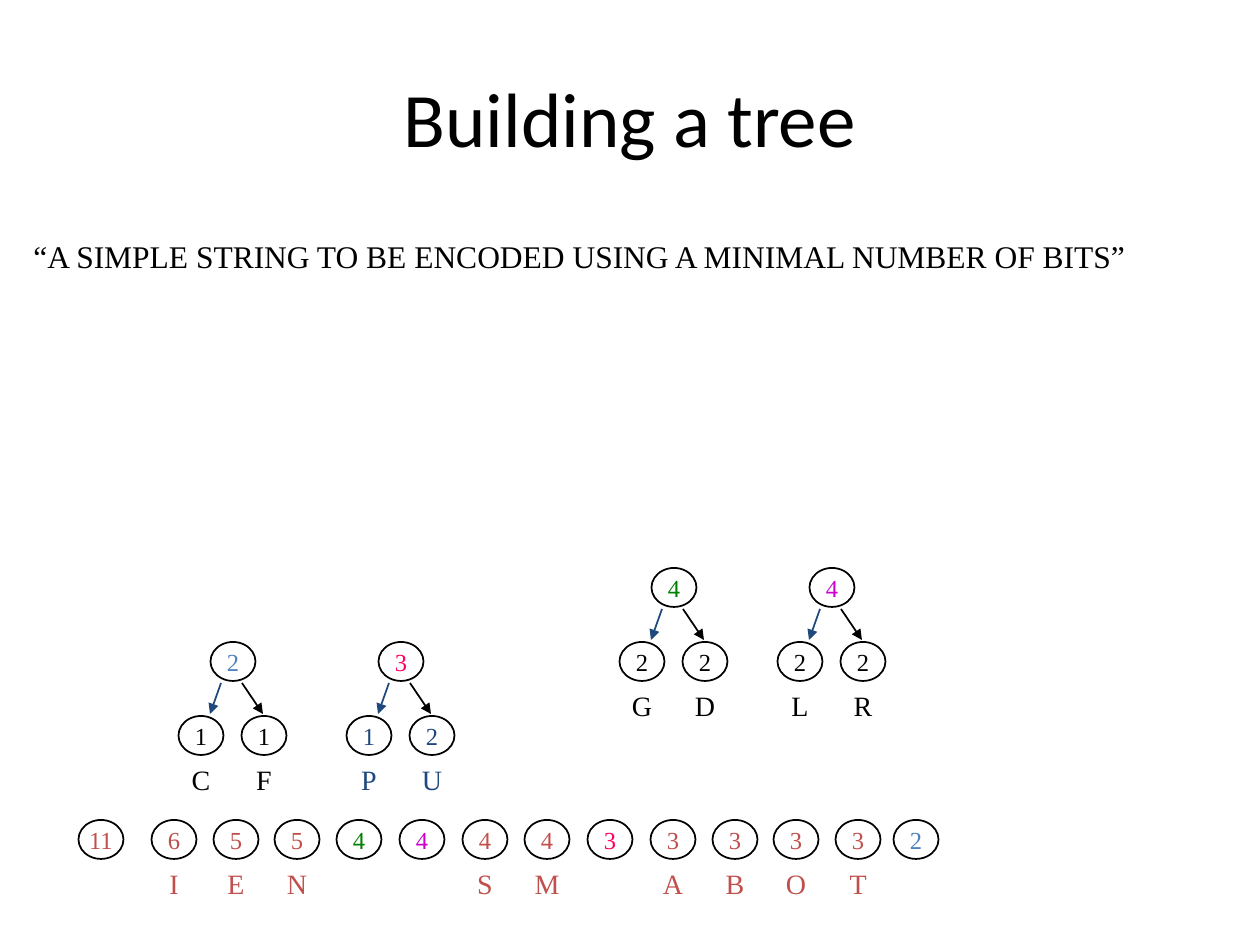
from lxml.etree import SubElement
from pptx import Presentation
from pptx.dml.color import RGBColor
from pptx.enum.shapes import MSO_CONNECTOR as Link, MSO_SHAPE as Shape
from pptx.enum.text import MSO_ANCHOR as Anchor, MSO_AUTO_SIZE as Fit, PP_ALIGN as Align
from pptx.oxml.ns import qn
from pptx.util import Emu, Pt

BLACK = RGBColor(0x00, 0x00, 0x00)
RED = RGBColor(0xC0, 0x50, 0x4D)
NAVY = RGBColor(0x1F, 0x49, 0x7D)
BLUE = RGBColor(0x4F, 0x81, 0xBD)
PINK = RGBColor(0xFF, 0x00, 0x66)
PURPLE = RGBColor(0xCC, 0x00, 0xCC)
GREEN = RGBColor(0x00, 0x80, 0x00)

TITLE = "Building a tree"
QUOTE = "“A SIMPLE STRING TO BE ENCODED USING A MINIMAL NUMBER OF BITS”"

# centre x, count, letter, colour
QUEUE = [
    (101, "11", "", RED), (174, "6", "I", RED), (236, "5", "E", RED),
    (297, "5", "N", RED), (359, "4", "", GREEN), (422, "4", "", PURPLE),
    (485, "4", "S", RED), (547, "4", "M", RED), (610, "3", "", PINK),
    (673, "3", "A", RED), (735, "3", "B", RED), (796, "3", "O", RED),
    (858, "3", "T", RED), (916, "2", "", BLUE),
]
# root x, root top, sum, root colour, leaf colour, (count, letter) of each leaf
TREES = [
    (233, 642, "2", BLUE, BLACK, [("1", "C"), ("1", "F")]),
    (401, 642, "3", PINK, NAVY, [("1", "P"), ("2", "U")]),
    (674, 568, "4", GREEN, BLACK, [("2", "G"), ("2", "D")]),
    (832, 568, "4", PURPLE, BLACK, [("2", "L"), ("2", "R")]),
]
# leaf offset, arrow start and end offsets, arrow colour
SIDES = [(-32, -12, -23, NAVY), (31, 9, 30, BLACK)]
QUEUE_TOP = 820
LEVEL = 74
NODE_W, NODE_H = 45, 39


def px(*vals):
    return [Emu(round(v * 914400 / 126)) for v in vals]


def put(frame, text, size=14, color=BLACK, font="Times New Roman", align=Align.CENTER):
    par = frame.paragraphs[0]
    par.alignment = align
    run = par.add_run()
    run.text = text
    run.font.size = Pt(size)
    run.font.name = font
    run.font.color.rgb = color


def label(shapes, box, text, wrap=False, **style):
    frame = shapes.add_textbox(*px(*box)).text_frame
    frame.word_wrap = wrap
    frame.auto_size = Fit.SHAPE_TO_FIT_TEXT
    if wrap:
        frame.margin_left = frame.margin_right = 0
    put(frame, text, **style)


def node(slide, x, top, count, letter, color):
    """Group a ringed count with the letter under it; x is the centre."""
    parts = slide.shapes.add_group_shape().shapes
    ring = parts.add_shape(Shape.OVAL, *px(x - NODE_W / 2, top, NODE_W, NODE_H))
    ring.shadow.inherit = False
    ring.fill.background()
    ring.line.color.rgb = BLACK
    ring.line.width = Pt(1)
    wide = 26 + 12 * len(count)
    label(parts, (x - wide / 2, top - 1, wide, 42), count, color=color)
    if letter:
        label(parts, (x - 16, top + 40, 32, 47), letter, wrap=True, size=16, color=color)


def arrow(slide, ends, color):
    line = slide.shapes.add_connector(Link.STRAIGHT, *px(*ends))
    line.line.color.rgb = color
    line.line.width = Pt(1)
    SubElement(line.line._get_or_add_ln(), qn("a:tailEnd"), type="triangle")
    SubElement(line._element.spPr, qn("a:effectLst"))


def main():
    prs = Presentation()
    prs.slide_width, prs.slide_height = px(1260, 945)
    slide = prs.slides.add_slide(prs.slide_layouts[5])

    title = slide.shapes.title
    title.left, title.top, title.width, title.height = px(63, 38, 1134, 157)
    title.text_frame.vertical_anchor = Anchor.MIDDLE
    put(title.text_frame, TITLE, size=44, font="Calibri")
    label(slide.shapes, (21, 231, 1125, 50), QUOTE, size=18, align=Align.LEFT)

    for x, count, letter, color in QUEUE:
        node(slide, x, QUEUE_TOP, count, letter, color)

    for x, top, total, color, shade, leaves in TREES:
        for (count, letter), (shift, start, end, ink) in zip(leaves, SIDES):
            node(slide, x + shift, top + LEVEL, count, letter, shade)
            arrow(slide, (x + start, top + 41, x + end, top + LEVEL - 2), ink)
        node(slide, x, top, total, "", color)

    prs.save("out.pptx")


if __name__ == "__main__":
    main()
